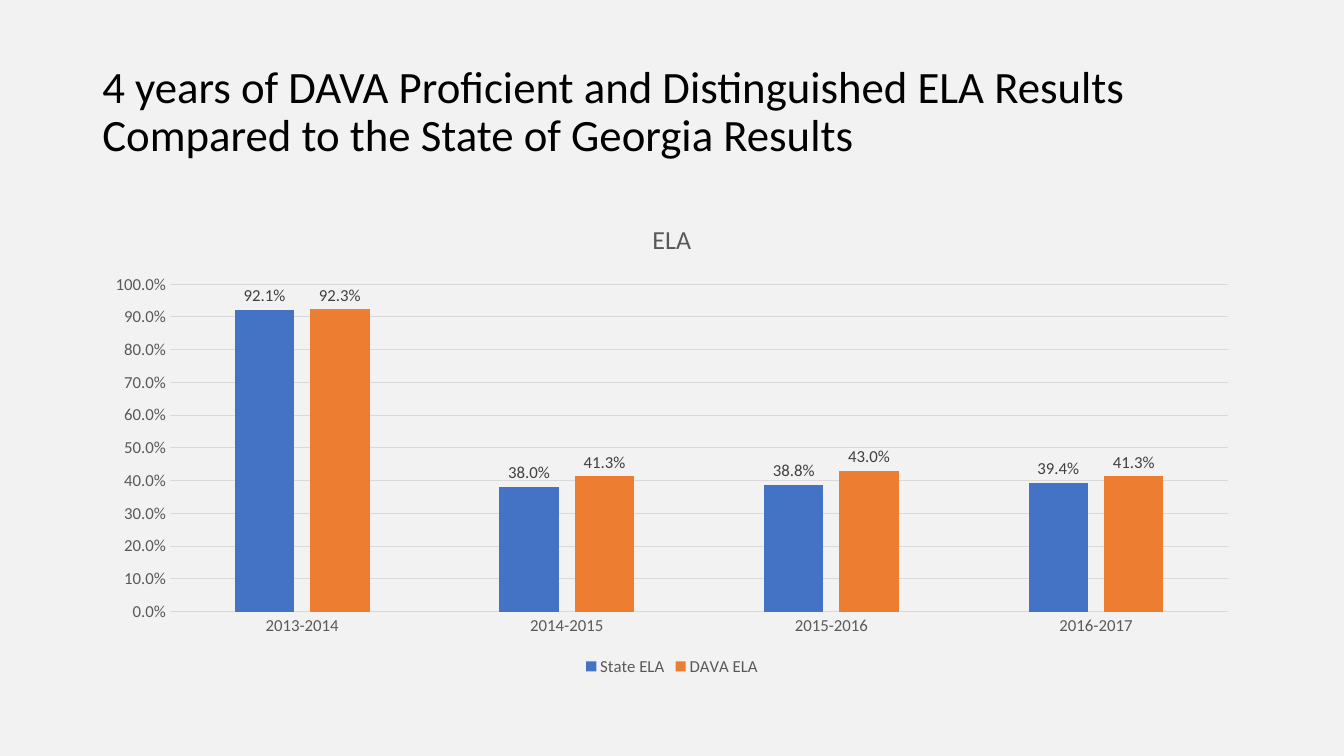
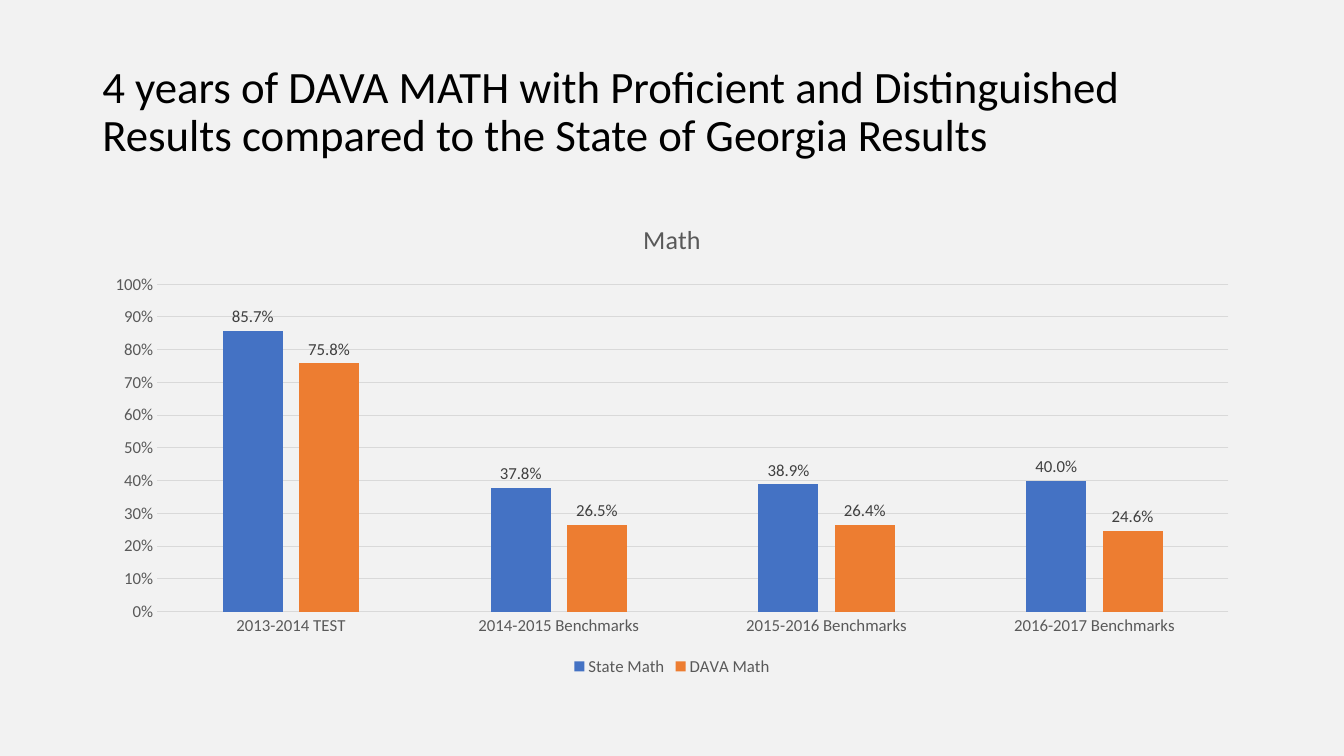
from dataclasses import dataclass

from pptx import Presentation, util as u
from pptx.chart.data import CategoryChartData
from pptx.dml.color import RGBColor
from pptx.enum import chart as ch, text as tx

PX = 9525
FACE = "Calibri"
PAPER = RGBColor(0xF2, 0xF2, 0xF2)
BLACK = RGBColor(0, 0, 0)
GREY = RGBColor(0x59, 0x59, 0x59)
DARK = RGBColor(0x40, 0x40, 0x40)
RULE = RGBColor(0xD9, 0xD9, 0xD9)
BLUE = RGBColor(0x44, 0x72, 0xC4)
ORANGE = RGBColor(0xED, 0x7D, 0x31)
SCHOOL = "DAVA"


@dataclass(frozen=True)
class Box:
    left: int
    top: int
    width: int
    height: int

    def emu(self) -> tuple[int, ...]:
        return tuple(n * PX for n in (self.left, self.top, self.width, self.height))


@dataclass(frozen=True)
class Series:
    name: str
    vals: tuple[float, ...]
    tint: RGBColor


@dataclass(frozen=True)
class Page:
    head: str
    topic: str
    years: tuple[str, ...]
    scale: str
    state: tuple[float, ...]
    school: tuple[float, ...]

    def series(self) -> tuple[Series, Series]:
        return (
            Series(f"State {self.topic}", self.state, BLUE),
            Series(f"{SCHOOL} {self.topic}", self.school, ORANGE),
        )


HEAD = Box(88, 38, 1104, 139)
PLOT = Box(88, 192, 1104, 456)
PAGES = (
    Page(
        f"4 years of {SCHOOL} Proficient and Distinguished ELA Results "
        "Compared to the State of Georgia Results",
        "ELA",
        ("2013-2014", "2014-2015", "2015-2016", "2016-2017"),
        "0.0%",
        (0.921, 0.38, 0.388, 0.394),
        (0.923, 0.413, 0.43, 0.413),
    ),
    Page(
        f"4 years of {SCHOOL} MATH with Proficient and Distinguished "
        "Results compared to the State of Georgia Results",
        "Math",
        (
            "2013-2014 TEST",
            "2014-2015 Benchmarks",
            "2015-2016 Benchmarks",
            "2016-2017 Benchmarks",
        ),
        "0%",
        (0.857, 0.378, 0.389, 0.4),
        (0.758, 0.265, 0.264, 0.246),
    ),
)


def style(font, size: float, tint: RGBColor) -> None:
    font.name = FACE
    font.size = u.Pt(size)
    font.bold = False
    font.color.rgb = tint


def rule(line) -> None:
    line.color.rgb = RULE
    line.width = u.Pt(0.75)


def add_head(slide, words: str) -> None:
    frame = slide.shapes.add_textbox(*HEAD.emu()).text_frame
    frame.word_wrap = True
    frame.vertical_anchor = tx.MSO_ANCHOR.MIDDLE
    para = frame.paragraphs[0]
    para.line_spacing = 0.9
    run = para.add_run()
    run.text = words
    style(run.font, 32, BLACK)


def set_axes(chart, scale: str) -> None:
    for axis in (chart.category_axis, chart.value_axis):
        axis.major_tick_mark = axis.minor_tick_mark = ch.XL_TICK_MARK.NONE
        style(axis.tick_labels.font, 12, GREY)
    rule(chart.category_axis.format.line)
    value = chart.value_axis
    value.minimum_scale, value.maximum_scale, value.major_unit = 0, 1, 0.1
    value.format.line.fill.background()
    value.has_major_gridlines = True
    rule(value.major_gridlines.format.line)
    value.tick_labels.number_format = scale
    value.tick_labels.number_format_is_linked = False


def set_bars(plot, series: tuple[Series, ...]) -> None:
    plot.gap_width = 219
    plot.overlap = -27
    plot.vary_by_categories = False
    for bars, item in zip(plot.series, series):
        bars.format.fill.solid()
        bars.format.fill.fore_color.rgb = item.tint
        bars.invert_if_negative = False
        marks = bars.data_labels
        marks.show_value = True
        marks.position = ch.XL_LABEL_POSITION.OUTSIDE_END
        marks.number_format = "0.0%"
        marks.number_format_is_linked = False
        style(marks.font, 12, DARK)


def add_plot(slide, page: Page) -> None:
    data = CategoryChartData(number_format="0.0%")
    data.categories = page.years
    for item in page.series():
        data.add_series(item.name, item.vals)
    kind = ch.XL_CHART_TYPE.COLUMN_CLUSTERED
    chart = slide.shapes.add_chart(kind, *PLOT.emu(), data).chart
    style(chart.font, 10, BLACK)
    chart.has_title = True
    run = chart.chart_title.text_frame.paragraphs[0].add_run()
    run.text = page.topic
    style(run.font, 18.6, GREY)
    chart.chart_title.include_in_layout = False
    chart.has_legend = True
    chart.legend.position = ch.XL_LEGEND_POSITION.BOTTOM
    chart.legend.include_in_layout = False
    style(chart.legend.font, 12, GREY)
    set_axes(chart, page.scale)
    set_bars(chart.plots[0], page.series())


def main() -> None:
    deck = Presentation()
    deck.slide_width, deck.slide_height = 1280 * PX, 720 * PX
    fill = deck.slide_master.background.fill
    fill.solid()
    fill.fore_color.rgb = PAPER
    for page in PAGES:
        slide = deck.slides.add_slide(deck.slide_layouts[6])
        add_head(slide, page.head)
        add_plot(slide, page)
    deck.save("out.pptx")


if __name__ == "__main__":
    main()
